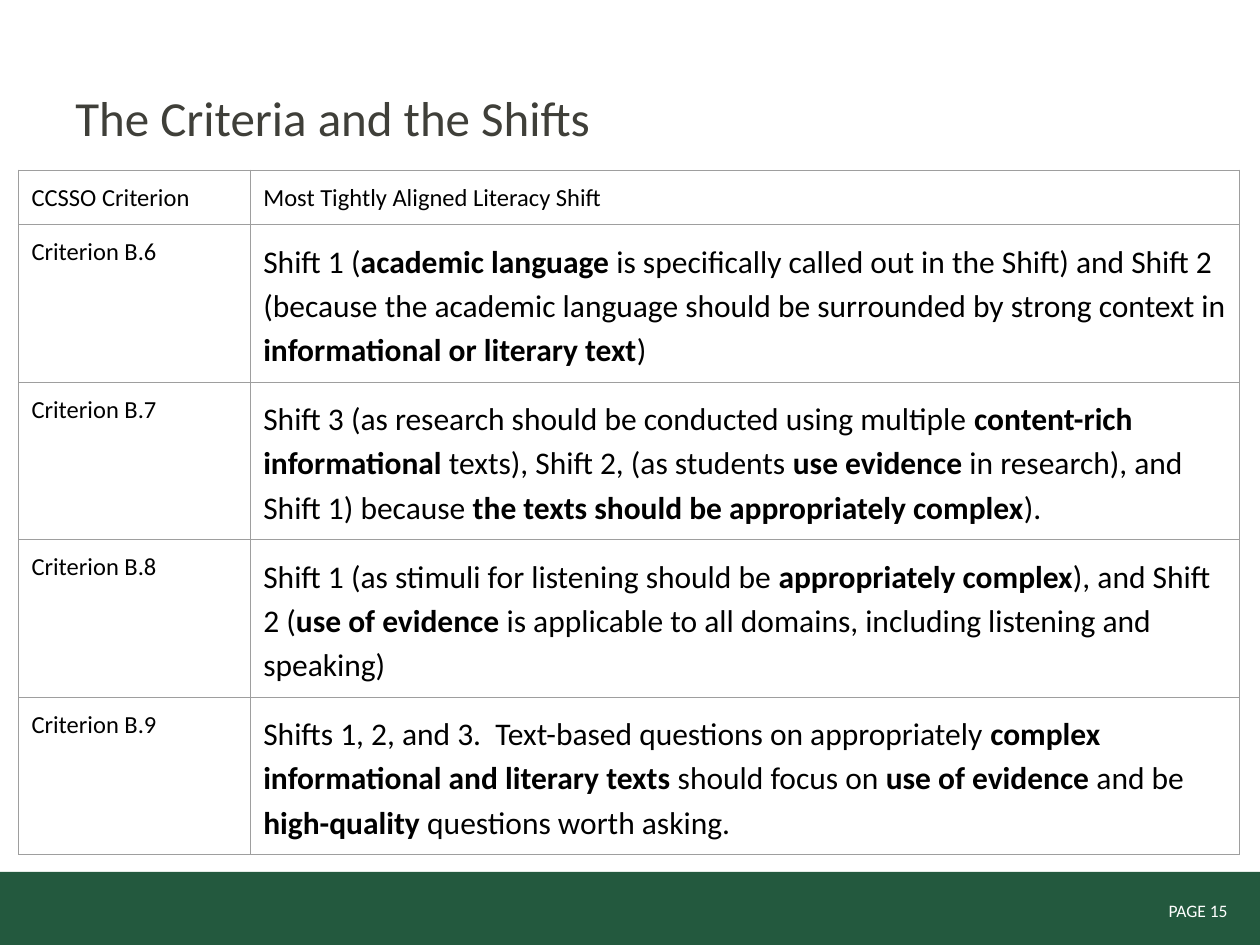
from lxml.etree import SubElement
from pptx import Presentation
from pptx.dml.color import RGBColor
from pptx.enum.shapes import MSO_SHAPE as Shape
from pptx.enum.text import MSO_ANCHOR as Anchor, PP_ALIGN as Align
from pptx.oxml.ns import qn
from pptx.util import Inches, Pt

FONT = "Calibri"
BLACK, WHITE, GREEN, TITLE_GRAY, BORDER_GRAY = "000000", "FFFFFF", "23593E", "3F3F39", "9E9E9E"

TITLE = "The Criteria and the Shifts"
PAGE_LABEL = "PAGE 15"
HEADERS = ("CCSSO Criterion", "Most Tightly Aligned Literacy Shift")
# Each shift text alternates between regular and bold spans, regular first
CRITERIA = [
    ("Criterion B.6", [
        "Shift 1 (", "academic language ",
        "is specifically called out in the Shift) and Shift 2 (because the academic "
        "language should be surrounded by strong context in ",
        "informational or literary text", ")"]),
    ("Criterion B.7", [
        "Shift 3 (as research should be conducted using multiple ",
        "content-rich informational ", "texts), Shift 2, (as students ", "use evidence ",
        "in research), and Shift 1) because ",
        "the texts should be appropriately complex", ")."]),
    ("Criterion B.8", [
        "Shift 1 (as stimuli for listening should be ", "appropriately complex",
        "), and Shift 2 (", "use of evidence",
        " is applicable to all domains, including listening and speaking)"]),
    ("Criterion B.9", [
        "Shifts 1, 2, and 3.  Text-based questions on appropriately ",
        "complex informational and literary texts ", "should focus on ",
        "use of evidence ", "and be ", "high-quality ", "questions worth asking."]),
]
COLUMN_WIDTHS = (1.84, 7.85)
HEADER_HEIGHT, ROW_HEIGHT = 0.43, 1.25


def color(value):
    return RGBColor.from_string(value)


def write(frame, spans, size, ink, align=Align.LEFT, spacing=None):
    para = frame.paragraphs[0]
    para.alignment = align
    if spacing:
        para.line_spacing = spacing
    for index, text in enumerate(spans):
        span = para.add_run()
        span.text = text
        span.font.name = FONT
        span.font.size = Pt(size)
        span.font.bold = index % 2 == 1
        span.font.color.rgb = color(ink)


def add_text(page, place, text, size, ink, align=Align.LEFT, anchor=Anchor.TOP):
    box = page.shapes.add_textbox(*map(Inches, place))
    box.text_frame.word_wrap = True
    box.text_frame.vertical_anchor = anchor
    write(box.text_frame, [text], size, ink, align)


def style_cell(cell):
    cell.margin_left = cell.margin_right = Inches(0.1)
    cell.margin_top = cell.margin_bottom = Inches(0.1)
    properties = cell._tc.get_or_add_tcPr()
    for side in ("a:lnL", "a:lnR", "a:lnT", "a:lnB"):
        line = SubElement(properties, qn(side), w=str(Pt(0.75)))
        fill = SubElement(line, qn("a:solidFill"))
        SubElement(fill, qn("a:srgbClr"), val=BORDER_GRAY)
    cell.fill.background()


deck = Presentation()
deck.slide_width, deck.slide_height = Inches(10), Inches(7.5)
page = deck.slides.add_slide(deck.slide_layouts[6])

# Footer band and page label
band = page.shapes.add_shape(Shape.RECTANGLE, 0, Inches(6.92), Inches(10.01), Inches(0.59))
band.shadow.inherit = False
band.fill.solid()
band.fill.fore_color.rgb = color(GREEN)
band.line.fill.background()
add_text(page, (8.28, 7.09, 1.56, 0.27), PAGE_LABEL, 10, WHITE, Align.RIGHT)

# Title
add_text(page, (0.5, 0.3, 9, 1.25), TITLE, 28, TITLE_GRAY, anchor=Anchor.MIDDLE)

# Criteria table
heights = [HEADER_HEIGHT] + [ROW_HEIGHT] * len(CRITERIA)
table = page.shapes.add_table(
    len(heights), len(COLUMN_WIDTHS), Inches(0.15), Inches(1.35),
    Inches(sum(COLUMN_WIDTHS)), Inches(sum(heights))).table
table.first_row = table.horz_banding = False
for column, width in zip(table.columns, COLUMN_WIDTHS):
    column.width = Inches(width)
for row, height in zip(table.rows, heights):
    row.height = Inches(height)
for cell in table.iter_cells():
    style_cell(cell)

for index, header in enumerate(HEADERS):
    write(table.cell(0, index).text_frame, [header], 14, BLACK)
for index, (criterion, shift) in enumerate(CRITERIA, start=1):
    write(table.cell(index, 0).text_frame, [criterion], 14, BLACK)
    write(table.cell(index, 1).text_frame, shift, 18, BLACK, spacing=1.15)

deck.save("out.pptx")
